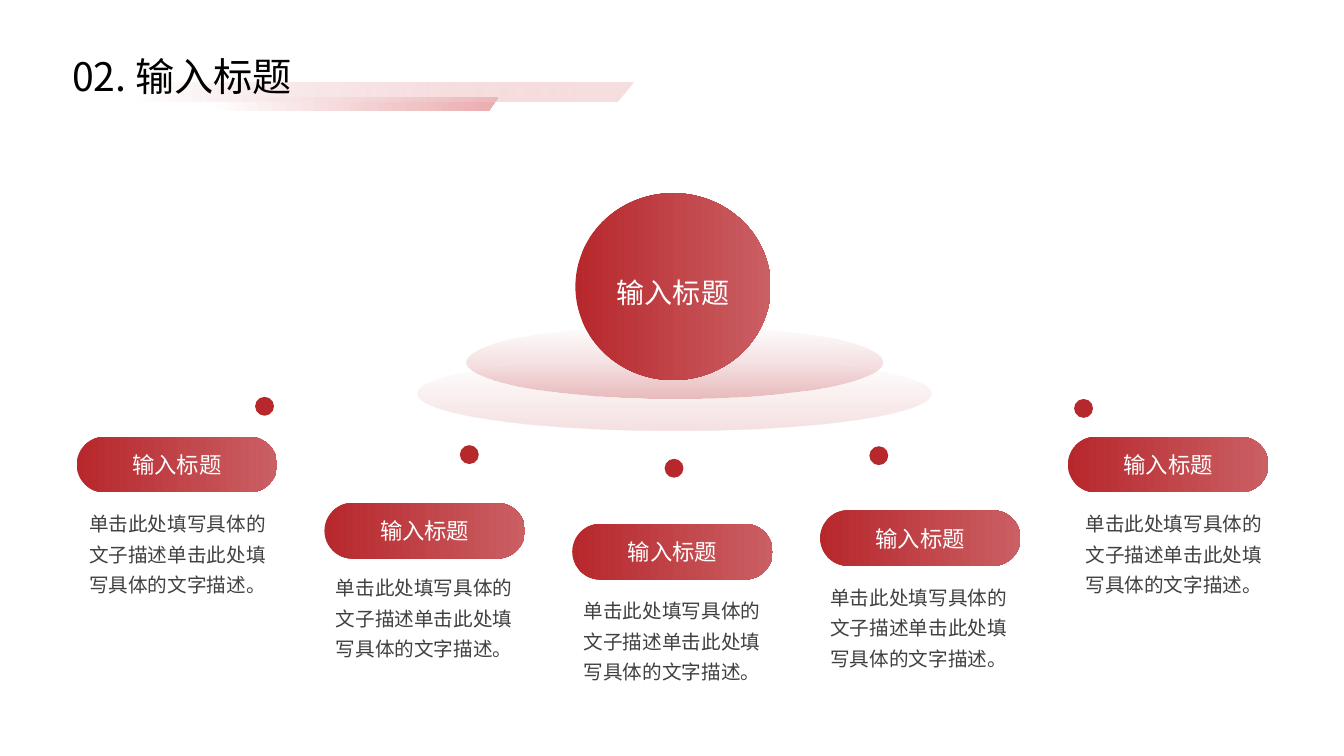
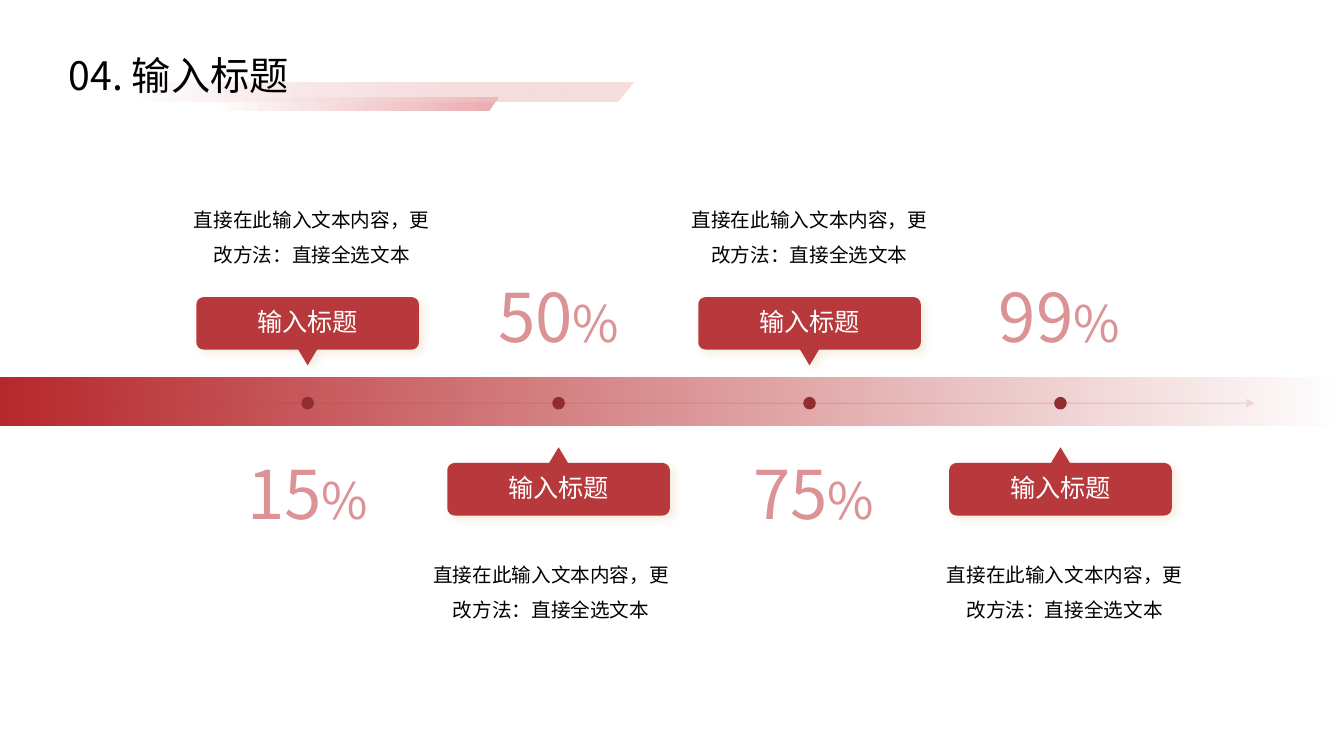
from math import cos, radians, sin

from lxml.etree import SubElement
from pptx import Presentation
from pptx.dml.color import RGBColor
from pptx.enum.shapes import MSO_CONNECTOR as CONNECTOR, MSO_SHAPE as SHAPE
from pptx.enum.text import MSO_ANCHOR as ANCHOR, MSO_AUTO_SIZE as AUTO_SIZE, PP_ALIGN as ALIGN
from pptx.oxml.ns import qn
from pptx.util import Pt

PX = 9525
FONT = "Noto Sans CJK SC"
RED, ROSE, PINK, WHITE = "B7282C", "CA5F64", "EAACAF", "FFFFFF"
CALLOUT_RED, DOT_RED, PERCENT_RED = "B7393C", "912D2E", "DB9395"
GRAY, BLACK = "404040", "000000"
RED_TO_ROSE = (RED, 0, 100), (ROSE, 100, 100)
HEADING = "输入标题"

color = RGBColor.from_string


def add_shape(slide, kind, box, *stops, angle=0):
    """Add a shape filled with one hex colour or with two (colour, position, opacity) stops."""
    shape = slide.shapes.add_shape(kind, *[PX * length for length in box])
    shape.shadow.inherit = False
    shape.line.fill.background()
    if len(stops) == 1:
        shape.fill.solid()
        shape.fill.fore_color.rgb = color(stops[0])
        return shape
    shape.fill.gradient()
    shape.fill.gradient_angle = angle
    for stop, (hex_color, position, _) in zip(shape.fill.gradient_stops, stops):
        stop.color.rgb = color(hex_color)
        stop.position = position / 100
    color_elements = list(shape.element.spPr.iter(qn("a:srgbClr")))
    for element, (_, _, opacity) in zip(color_elements, stops):
        SubElement(element, qn("a:alpha"), val=str(opacity * 1000))
    return shape


def write(target, text, size, hex_color, box=None, align=ALIGN.CENTER, anchor=ANCHOR.TOP,
          spacing=None, wrap=True, inset=None):
    """Append a run to a shape, or to a new text box on a slide if a box is given."""
    shape = target.shapes.add_textbox(*[PX * length for length in box]) if box else target
    frame = shape.text_frame
    frame.auto_size = AUTO_SIZE.NONE
    frame.word_wrap = wrap
    frame.vertical_anchor = anchor
    if inset is not None:
        frame.margin_left = frame.margin_right = PX * inset
        frame.margin_top = frame.margin_bottom = PX * inset
    paragraph = frame.paragraphs[0]
    paragraph.alignment = align
    if spacing:
        paragraph.line_spacing = spacing
    run = paragraph.add_run()
    run.text = text
    run.font.size = Pt(size)
    run.font.color.rgb = color(hex_color)
    run.font.name = FONT
    SubElement(run._r.get_or_add_rPr(), qn("a:ea"), typeface=FONT)
    return shape


presentation = Presentation()
presentation.slide_width = PX * 1280
presentation.slide_height = PX * 720
layout = presentation.slide_layouts[5]

# Slides and titles
slides = []
for number, left, top in (("02", 59, 45), ("04", 56, 44)):
    slide = presentation.slides.add_slide(layout)
    title = slide.shapes.title
    title.left, title.top, title.width, title.height = PX * left, PX * top, PX * 319, PX * 55
    write(title, f"{number}. {HEADING}", 28, BLACK, align=ALIGN.LEFT)
    slides.append(slide)
orbit_slide, timeline_slide = slides

# Title bands, moved into the layout that both slides share
for box, slant, opacity in (((198, 92, 277, 14), 0.7, 100), ((125, 79, 478, 18), 0.87, 38)):
    band = add_shape(orbit_slide, SHAPE.PARALLELOGRAM, box, (WHITE, 0, 100), (PINK, 100, opacity))
    band.adjustments[0] = slant
    layout.placeholders[0].element.addprevious(band.element)

# Slide 1: sphere on two platforms, five topics around it
add_shape(orbit_slide, SHAPE.OVAL, (398, 340, 489, 70),
          (ROSE, 10, 0), (ROSE, 99, 19), angle=270)
add_shape(orbit_slide, SHAPE.OVAL, (444, 310, 396, 70),
          (ROSE, 0, 0), (ROSE, 100, 36), angle=270)
sphere = add_shape(orbit_slide, SHAPE.OVAL, (548, 184, 186, 178), *RED_TO_ROSE)
write(sphere, HEADING, 20, WHITE, anchor=ANCHOR.MIDDLE, wrap=False)
sphere.text_frame.margin_top = PX * 15

topics = [  # dot top, pill top, description left, description top
    (378, 416, 81, 481),
    (424, 479, 316, 542),
    (437, 499, 552, 564),
    (425, 486, 787, 551),
    (380, 416, 1030, 481),
]
for index, (dot_top, pill_top, text_left, text_top) in enumerate(topics):
    add_shape(orbit_slide, SHAPE.OVAL, (243 + 195 * index, dot_top, 18, 18), RED)
    pill = add_shape(orbit_slide, SHAPE.ROUNDED_RECTANGLE,
                     (73 + 236 * index, pill_top, 191, 53), *RED_TO_ROSE)
    pill.adjustments[0] = 0.5
    write(pill, HEADING, 16, WHITE, anchor=ANCHOR.MIDDLE, wrap=False)
    write(orbit_slide, "单击此处填写具体的文子描述单击此处填写具体的文字描述。", 14, GRAY,
          box=(text_left, text_top, 176, 88), spacing=1.3, inset=0)

# Slide 2: fading bar with an arrow
add_shape(timeline_slide, SHAPE.RECTANGLE, (0, 360, 1280, 45), (RED, 0, 100), (RED, 100, 0))
arrow = timeline_slide.shapes.add_connector(
    CONNECTOR.STRAIGHT, PX * 109, PX * 384, PX * 1195, PX * 384)
arrow.line.width = Pt(1)
arrow.line.color.rgb = color(CALLOUT_RED)
arrow_properties = arrow.element.spPr
SubElement(next(arrow_properties.iter(qn("a:srgbClr"))), qn("a:alpha"), val="15000")
SubElement(arrow_properties.find(qn("a:ln")), qn("a:tailEnd"), type="triangle")
SubElement(arrow_properties, qn("a:effectLst"))

# Callout outline around its centre, with the tail pointing down
outline = [(-9, 25), (0, 40), (9, 25)]
for corner, (x, y) in enumerate([(99, 18), (99, -18), (-99, -18), (-99, 18)]):
    for step in range(5):
        turn = radians(90 - 90 * corner - 22.5 * step)
        outline.append((x + 7 * cos(turn), y + 7 * sin(turn)))

# Milestones, alternately above and below the bar
milestones = [("15", 293, 297), ("50", 532, 525), ("75", 775, 771), ("99", 1009, 1014)]
for index, (percent, percent_center, text_center) in enumerate(milestones):
    center = 293 + 239 * index
    if index % 2 == 0:
        tail, callout_center, heading_top, text_top, percent_top = 1, 308, 287, 182, 426
    else:
        tail, callout_center, heading_top, text_top, percent_top = -1, 466, 445, 520, 258

    add_shape(timeline_slide, SHAPE.OVAL, (center - 6, 378, 12, 12), DOT_RED)
    points = [(PX * (center + x), PX * (callout_center + tail * y)) for x, y in outline]
    builder = timeline_slide.shapes.build_freeform(*points[0])
    builder.add_line_segments(points[1:])
    callout = builder.convert_to_shape()
    callout.fill.solid()
    callout.fill.fore_color.rgb = color(CALLOUT_RED)
    callout.line.fill.background()
    callout.shadow.inherit = False
    shadow = SubElement(callout.element.spPr.find(qn("a:effectLst")), qn("a:outerShdw"),
                        blurRad=str(Pt(6)), dist=str(Pt(4)), dir="2700000")
    shadow_color = SubElement(shadow, qn("a:srgbClr"), val="C38627")
    SubElement(shadow_color, qn("a:alpha"), val="15000")

    write(timeline_slide, HEADING, 18, WHITE,
          box=(center - 58, heading_top, 116, 38), wrap=False)
    write(timeline_slide, "直接在此输入文本内容，更改方法：直接全选文本", 14, BLACK,
          box=(text_center - 127, text_top, 254, 74), spacing=1.5)
    figure = write(timeline_slide, percent, 48, PERCENT_RED,
                   box=(percent_center - 83, percent_top, 166, 87))
    write(figure, "%", 36, PERCENT_RED)

presentation.save("out.pptx")
